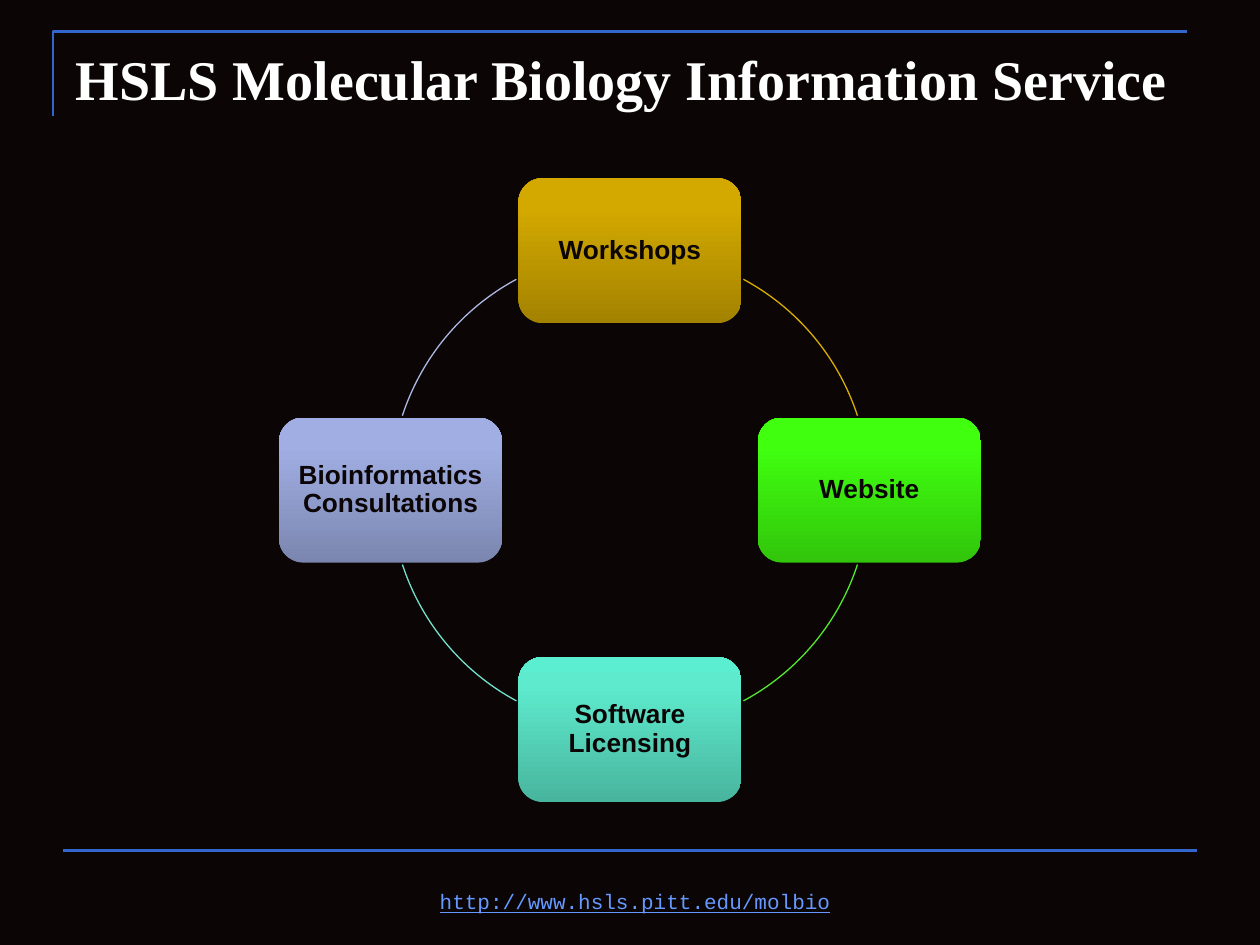
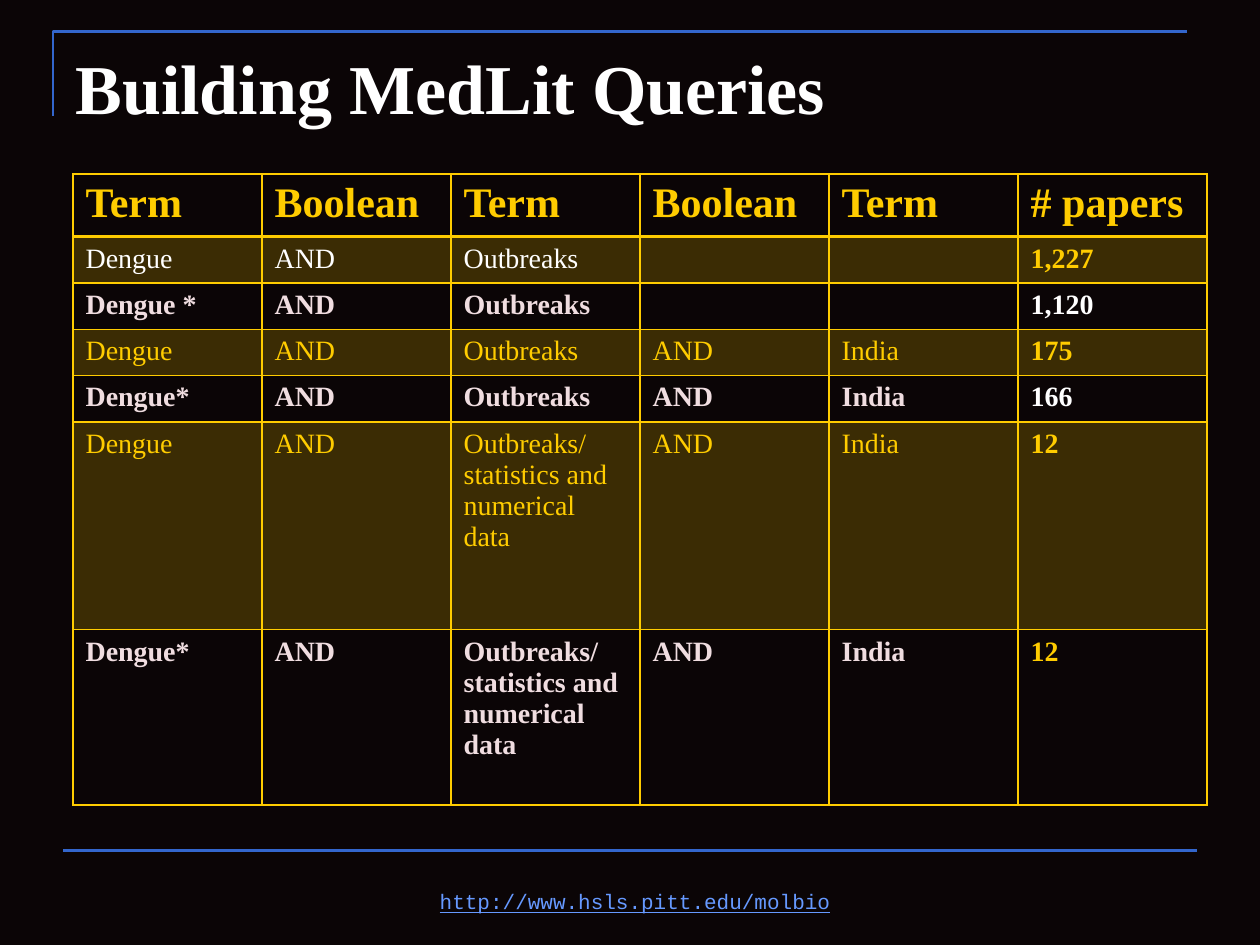
from dataclasses import dataclass

from lxml import etree
from pptx import Presentation
from pptx.dml.color import RGBColor
from pptx.enum.shapes import MSO_CONNECTOR, MSO_SHAPE
from pptx.enum.text import MSO_ANCHOR, MSO_AUTO_SIZE, PP_ALIGN
from pptx.oxml import parse_xml
from pptx.oxml.ns import nsdecls, qn
from pptx.presentation import Presentation as Deck
from pptx.slide import Slide
from pptx.table import _Cell as Cell
from pptx.text.text import _Paragraph as Para
from pptx.util import Inches, Pt

ARC = MSO_SHAPE.ARC
ROUND = MSO_SHAPE.ROUNDED_RECTANGLE
LINE = MSO_CONNECTOR.STRAIGHT
CENTER = PP_ALIGN.CENTER
MIDDLE = MSO_ANCHOR.MIDDLE
TOP = MSO_ANCHOR.TOP
FIXED = MSO_AUTO_SIZE.NONE

# Shared look
DARK, WHITE, BLUE, LINK = "0B0506", "FFFFFF", "3366CC", "6699FF"
GOLD, PINK = "FFCC00", "F0DDE0"
SERIF, SANS, MONO = "Times New Roman", "Arial", "Courier New"
URL = "http://www.hsls.pitt.edu/molbio"
PLAIN = "{2D5ABB26-0587-4C30-8999-92F81FD0307C}"  # table style without grid

# Ring of services
MID_X, MID_Y, RADIUS = 5, 3.89, 1.9
BOX_W, BOX_H = 1.77, 1.15


@dataclass
class Node:
    text: str
    side: tuple[int, int]        # direction from the centre of the ring
    shades: tuple[str, str, str]  # from bottom to top
    arc: tuple[float, float]     # degrees of the arc to the next node
    ink: str                     # colour of that arc


@dataclass
class Row:
    high: float
    cells: list[str]
    ink: str
    bold: bool
    last: str                    # colour of the paper count
    tint: bool = False
    size: int = 16
    base: int = 1                # width of the bottom border


NODES = [
    Node("Workshops", (0, -1), ("A38200", "D3A900", "D4A900"),
         (298.3, 341.9), "DAAE00"),
    Node("Website", (1, 0), ("31C50B", "40FF0F", "41FF10"),
         (18.1, 61.7), "52EB2C"),
    Node("Software Licensing", (0, 1), ("48B59E", "5EEACD", "5BEED0"),
         (118.3, 161.9), "72E1CA"),
    Node("Bioinformatics Consultations", (-1, 0),
         ("7B86AF", "A0AEE3", "9FAEE5"), (198.1, 241.7), "ADB8E2"),
]

STATS = "Outbreaks/\nstatistics and numerical data"
ROWS = [
    Row(0.47, ["Term", "Boolean", "Term", "Boolean", "Term", "# papers"],
        GOLD, True, GOLD, size=24, base=2),
    Row(0.35, ["Dengue", "AND", "Outbreaks", "", "", "1,227"],
        WHITE, False, GOLD, True),
    Row(0.35, ["Dengue *", "AND", "Outbreaks", "", "", "1,120"],
        PINK, True, WHITE),
    Row(0.35, ["Dengue", "AND", "Outbreaks", "AND", "India", "175"],
        GOLD, False, GOLD, True),
    Row(0.35, ["Dengue*", "AND", "Outbreaks", "AND", "India", "166"],
        PINK, True, WHITE),
    Row(1.65, ["Dengue", "AND", STATS, "AND", "India", "12"],
        GOLD, False, GOLD, True),
    Row(1.39, ["Dengue*", "AND", STATS, "AND", "India", "12"],
        PINK, True, GOLD),
]


def rgb(code: str) -> RGBColor:
    return RGBColor.from_string(code)


def style(para: Para, face: str, size: int, ink: str, bold: bool) -> None:
    font = para.font
    font.name, font.size, font.bold = face, Pt(size), bold
    font.color.rgb = rgb(ink)


def start(deck: Deck, head: str, size: int) -> Slide:
    """Add a slide with its title, frame lines and footer."""
    slide = deck.slides.add_slide(deck.slide_layouts[5])
    shapes = slide.shapes

    # Title
    title = shapes.title
    title.left, title.top = Inches(0.5), Inches(0.3)
    title.width, title.height = Inches(9), Inches(1.25)
    frame = title.text_frame
    frame.text = head
    frame.auto_size, frame.vertical_anchor = FIXED, TOP
    para = frame.paragraphs[0]
    para.alignment = PP_ALIGN.LEFT
    style(para, SERIF, size, WHITE, True)

    # Corner line and bottom line
    pen = shapes.build_freeform(Inches(0.42), Inches(0.92))
    pen.add_line_segments([(Inches(0.42), Inches(0.25)),
                           (Inches(9.42), Inches(0.25))], close=False)
    edge = pen.convert_to_shape()
    edge.shadow.inherit = False
    edge.fill.background()
    rule = shapes.add_connector(LINE, Inches(0.5), Inches(6.75),
                                Inches(9.5), Inches(6.75))
    etree.SubElement(rule._element.spPr, qn("a:effectLst"))
    for item in (edge, rule):
        item.line.color.rgb = rgb(BLUE)
        item.line.width = Pt(1.5)

    # Footer
    foot = shapes.add_textbox(Inches(1.08), Inches(7),
                              Inches(7.92), Inches(0.3)).text_frame
    foot.word_wrap = True
    foot.text = URL
    para = foot.paragraphs[0]
    para.alignment = CENTER
    style(para, MONO, 12, LINK, False)
    para.font.underline = True
    return slide


def shade(shape, shades: tuple[str, str, str]) -> None:
    """Fill a shape with a gradient that rises from the bottom."""
    stops = "".join(
        f'<a:gs pos="{spot * 1000}"><a:srgbClr val="{code}"/></a:gs>'
        for spot, code in zip((0, 80, 100), shades))
    grad = parse_xml(
        f'<a:gradFill {nsdecls("a")} rotWithShape="1"><a:gsLst>{stops}'
        '</a:gsLst><a:lin ang="16200000" scaled="0"/></a:gradFill>')
    shape._element.spPr.find(qn("a:prstGeom")).addnext(grad)


def draw_node(slide: Slide, node: Node) -> None:
    # Box
    left = MID_X + node.side[0] * RADIUS - BOX_W / 2
    top = MID_Y + node.side[1] * RADIUS - BOX_H / 2
    box = slide.shapes.add_shape(ROUND, Inches(left), Inches(top),
                                 Inches(BOX_W), Inches(BOX_H))
    box.shadow.inherit = False
    box.line.fill.background()
    shade(box, node.shades)
    frame = box.text_frame
    frame.word_wrap, frame.vertical_anchor = True, MIDDLE
    frame.margin_left = frame.margin_right = Inches(0.06)
    frame.margin_top = frame.margin_bottom = Inches(0.06)
    frame.text = node.text
    para = frame.paragraphs[0]
    para.alignment, para.line_spacing = CENTER, 0.9
    style(para, SANS, 15, DARK, True)

    # Arc to the next box
    arc = slide.shapes.add_shape(
        ARC, Inches(MID_X - RADIUS), Inches(MID_Y - RADIUS),
        Inches(2 * RADIUS), Inches(2 * RADIUS))
    arc.shadow.inherit = False
    arc.fill.background()
    arc.line.color.rgb = rgb(node.ink)
    arc.line.width = Pt(0.75)
    for i, angle in enumerate(node.arc):
        arc.adjustments[i] = angle * 0.6  # 60000 units a degree, per 100000


def border(cell: Cell, top: int, base: int) -> None:
    props = cell._tc.get_or_add_tcPr()
    for side, width in zip("LRTB", (1, 1, top, base)):
        props.append(parse_xml(
            f'<a:ln{side} {nsdecls("a")} w="{Pt(width)}"><a:solidFill>'
            f'<a:srgbClr val="{GOLD}"/></a:solidFill></a:ln{side}>'))


def fill_cell(cell: Cell, row: Row, text: str, ink: str, bold: bool,
              top: int) -> None:
    border(cell, top, row.base)
    if row.tint:
        cell.fill.solid()
        cell.fill.fore_color.rgb = rgb(GOLD)
        hue = cell._tc.tcPr.find(qn("a:solidFill"))[0]
        etree.SubElement(hue, qn("a:alpha"), val="20000")
    else:
        cell.fill.background()
    cell.text = text
    for para in cell.text_frame.paragraphs:
        style(para, SERIF, row.size, ink, bold)


def draw_table(slide: Slide) -> None:
    count = len(ROWS[0].cells)
    high = sum(row.high for row in ROWS)
    table = slide.shapes.add_table(len(ROWS), count, Inches(0.58),
                                   Inches(1.38), Inches(9),
                                   Inches(high)).table
    table._tbl.tblPr.find(qn("a:tableStyleId")).text = PLAIN
    table.horz_banding = False
    top = 1
    for r, row in enumerate(ROWS):
        table.rows[r].height = Inches(row.high)
        for c, text in enumerate(row.cells):
            end = c == count - 1
            fill_cell(table.cell(r, c), row, text,
                      row.last if end else row.ink, row.bold or end, top)
        top = row.base


def main() -> None:
    deck = Presentation()
    deck.slide_width, deck.slide_height = Inches(10), Inches(7.5)
    back = deck.slide_master.background.fill
    back.solid()
    back.fore_color.rgb = rgb(DARK)

    # Services
    slide = start(deck, "HSLS Molecular Biology Information Service", 32)
    for node in NODES:
        draw_node(slide, node)

    # Queries
    draw_table(start(deck, "Building MedLit Queries", 40))
    deck.save("out.pptx")


if __name__ == "__main__":
    main()
